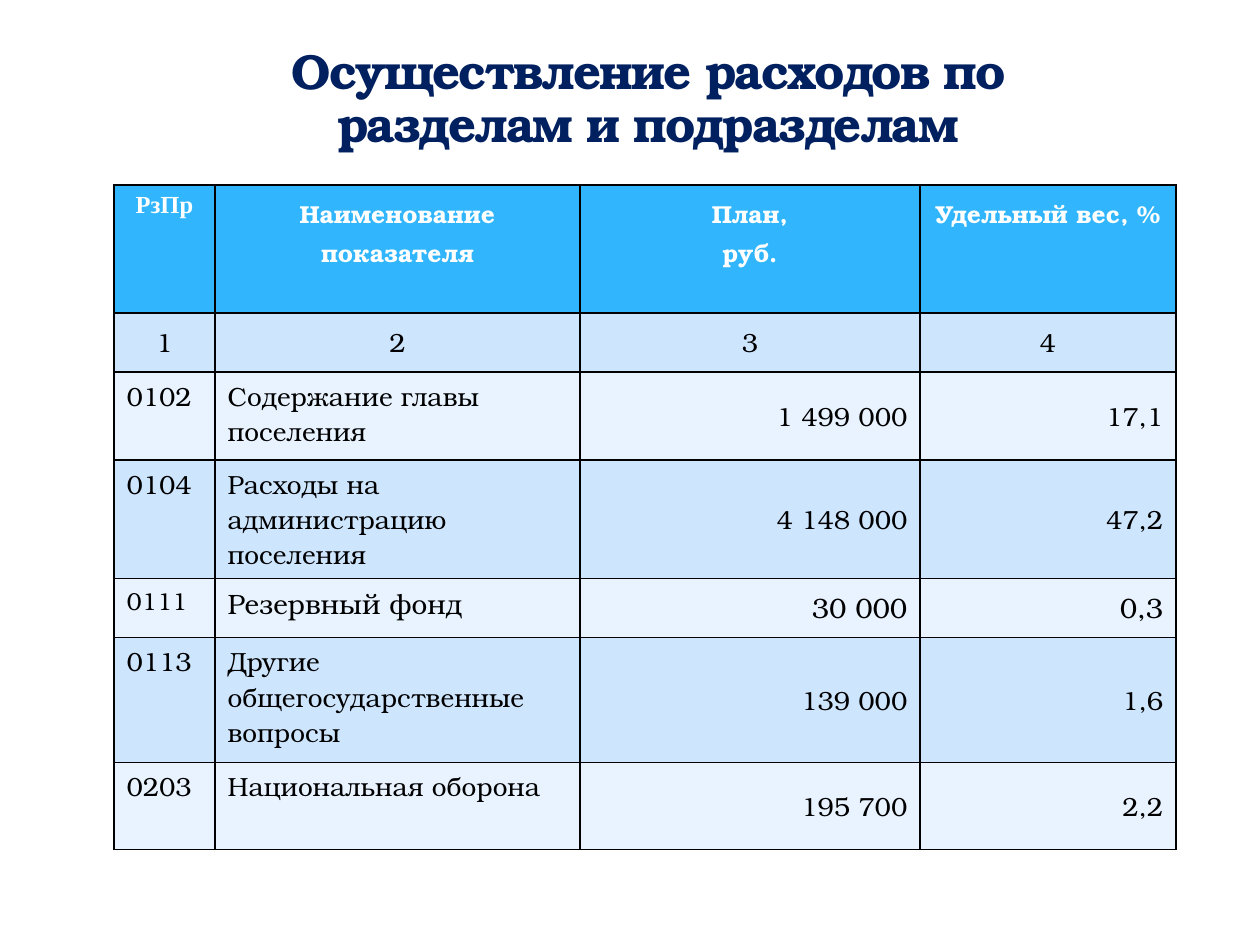
from lxml.etree import SubElement as Sub
from pptx import Presentation
from pptx.dml.color import RGBColor as Rgb
from pptx.enum.text import MSO_ANCHOR as Anchor, PP_ALIGN as Align
from pptx.oxml.ns import qn
from pptx.util import Pt

HUES = {"navy": "002060", "head": "31B6FD", "odd": "CEE5FE", "even": "E8F3FF",
        "white": "FFFFFF", "black": "000000"}
FACE = "TeX Gyre Bonum"
COLS = [101, 365, 340, 256]
HIGH = [128, 59, 88, 88, 59, 125, 87]
HEAD = ["РзПр", "Наименование показателя", "План,\nруб.", "Удельный вес, %"]
ROWS = [
    ["1", "2", "3", "4"],
    ["0102", "Содержание главы поселения", "1 499 000", "17,1"],
    ["0104", "Расходы на администрацию поселения", "4 148 000", "47,2"],
    ["0111", "Резервный фонд", "30 000", "0,3"],
    ["0113", "Другие общегосударственные вопросы", "139 000", "1,6"],
    ["0203", "Национальная оборона", "195 700", "2,2"],
]
SIZES = {(4, 0): 14, (4, 1): 16, (4, 2): 16, (4, 3): 16, (5, 2): 15, (5, 3): 15}


def px(num):
    """Turn pixels into EMU."""
    return round(num * 914400 / 126)


class Deck:
    """Hold the style and the current slide."""

    def __init__(self):
        self.prs = Presentation()
        self.prs.slide_width, self.prs.slide_height = px(1260), px(945)
        self.slide = self.prs.slides.add_slide(self.prs.slide_layouts[5])

    def style(self, frame, size, hue, align, bold=False, face=FACE, gap=None):
        """Format every paragraph of a text frame."""
        for para in frame.paragraphs:
            para.alignment = align
            para.line_spacing = gap
            font = para.font
            font.name, font.size, font.bold = face, Pt(size), bold
            font.color.rgb = Rgb.from_string(HUES[hue])

    def title(self, text, left, top, wide, high):
        """Place and format the title."""
        box = self.slide.shapes.title
        box.left, box.top, box.width, box.height = map(px, (left, top, wide, high))
        frame = box.text_frame
        frame.text, frame.word_wrap = text, True
        frame.vertical_anchor = Anchor.BOTTOM
        self.style(frame, 28, "navy", Align.CENTER, True, gap=0.9)
        for run in frame.paragraphs[0].runs:
            run.font._element.set("spc", "-100")

    def edge(self, cell):
        """Draw thin black borders round a cell."""
        props = cell._tc.get_or_add_tcPr()
        for spot, side in enumerate(("lnL", "lnR", "lnT", "lnB")):
            line = Sub(props, qn(f"a:{side}"), w=str(Pt(1)))
            Sub(Sub(line, qn("a:solidFill")), qn("a:srgbClr"), val=HUES["black"])
            props.insert(spot, line)

    def cell(self, cell, text, hue):
        """Fill a cell with text, colour and borders."""
        cell.text = text
        cell.fill.solid()
        cell.fill.fore_color.rgb = Rgb.from_string(HUES[hue])
        self.edge(cell)

    def table(self, left, top):
        """Build the table of spending."""
        grid = self.slide.shapes.add_table(
            len(HIGH), len(COLS), px(left), px(top), px(sum(COLS)), px(sum(HIGH))).table
        for col, wide in zip(grid.columns, COLS):
            col.width = px(wide)
        for row, high in zip(grid.rows, HIGH):
            row.height = px(high)
        for c, text in enumerate(HEAD):
            cell = grid.cell(0, c)
            self.cell(cell, text, "head")
            face, gap = (FACE, 1.1) if c else ("Times New Roman", None)
            self.style(cell.text_frame, 14, "white", Align.CENTER, True, face, gap)
        for r, row in enumerate(ROWS, 1):
            for c, text in enumerate(row):
                cell = grid.cell(r, c)
                self.cell(cell, text, "odd" if r % 2 else "even")
                if r == 1 or c > 1:
                    cell.vertical_anchor = Anchor.MIDDLE
                align = Align.CENTER if r == 1 else Align.RIGHT if c > 1 else Align.LEFT
                self.style(cell.text_frame, SIZES.get((r, c), 15), "black", align)


def main():
    """Build and save the slide."""
    deck = Deck()
    deck.table(114, 185)
    deck.title("Осуществление расходов по разделам и подразделам", 164, 96, 968, 63)
    deck.prs.save("out.pptx")


if __name__ == "__main__":
    main()
